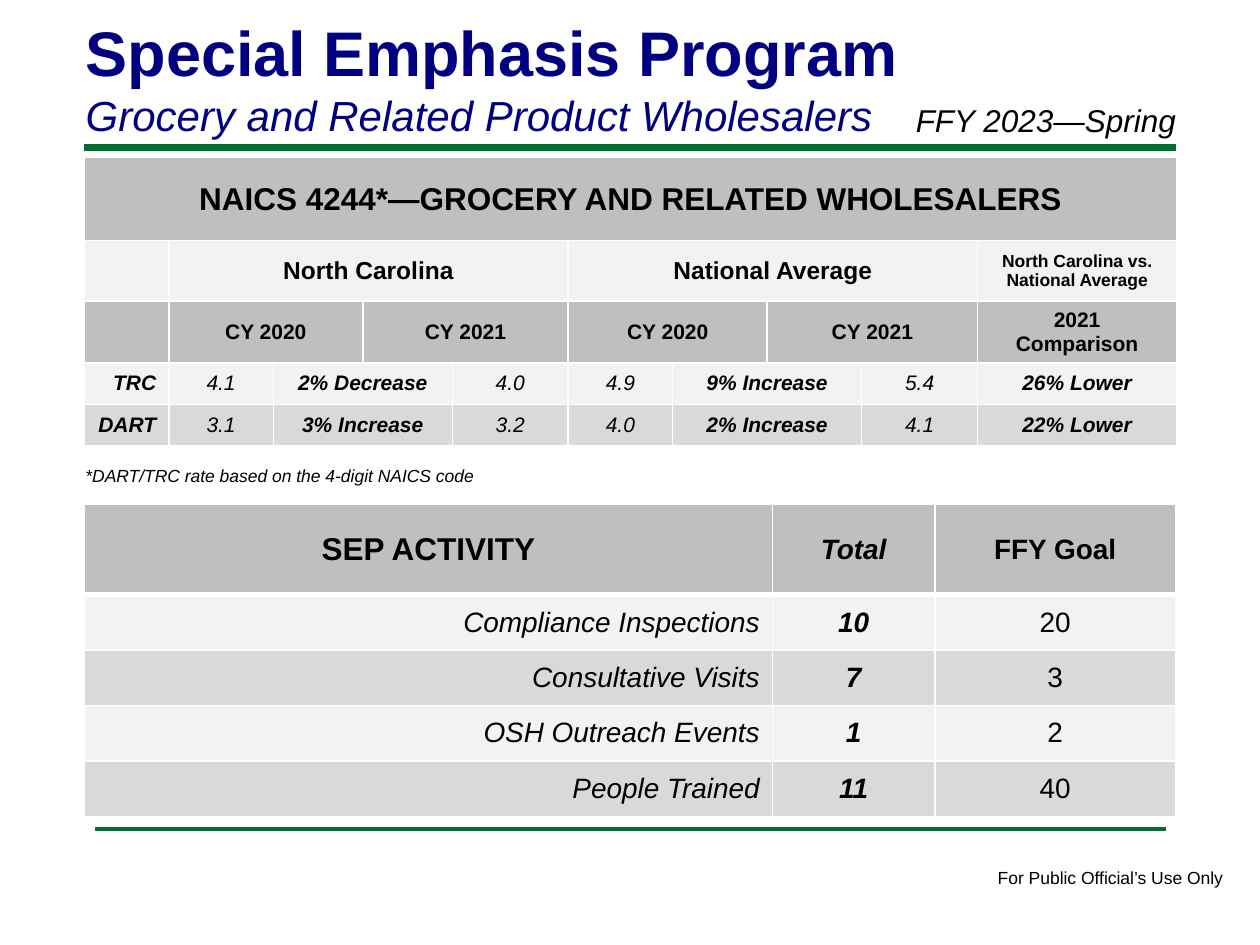
from lxml import etree
from pptx import Presentation
from pptx.dml.color import RGBColor
from pptx.enum.shapes import MSO_CONNECTOR
from pptx.enum.text import MSO_ANCHOR, MSO_AUTO_SIZE, PP_ALIGN
from pptx.oxml.ns import qn
from pptx.util import Inches, Pt

CENTER, LEFT, RIGHT = PP_ALIGN.CENTER, PP_ALIGN.LEFT, PP_ALIGN.RIGHT
MIDDLE, TOP = MSO_ANCHOR.MIDDLE, MSO_ANCHOR.TOP
NO_AUTOFIT = MSO_AUTO_SIZE.NONE
STRAIGHT = MSO_CONNECTOR.STRAIGHT

FONT = "Arial"
COLORS = {"navy": "000080", "green": "007030", "black": "000000", "white": "FFFFFF",
          "header": "BFBFBF", "light": "F2F2F2", "dark": "D9D9D9"}

TITLE = [("Special Emphasis Program", 36, True, False),
         ("Grocery and Related Product Wholesalers", 24, False, True)]
TEXTS = [("FFY 2023—Spring", (7.17, 0.75, 2.5, 0.4), 18, True, True),
         ("*DART/TRC rate based on the 4-digit NAICS code", (0.58, 3.64, 3.37, 0.27), 10, True, True),
         ("For Public Official’s Use Only", (7.82, 6.83, 2.01, 0.27), 10, False, False)]
RULES = [(0.67, 9.33, 1.17, 4), (0.75, 9.25, 6.58, 2)]

STYLES = {"banner": (18, True, False, CENTER), "region": (14, True, False, CENTER),
          "versus": (10, True, False, CENTER), "year": (12, True, False, CENTER),
          "measure": (12, True, True, RIGHT), "rate": (12, False, True, CENTER),
          "change": (12, True, True, CENTER), "total_head": (16, True, True, CENTER),
          "goal_head": (16, True, False, CENTER), "activity": (16, False, True, RIGHT),
          "total": (16, True, True, CENTER), "goal": (16, False, False, CENTER)}

RATE_STYLES = ["measure", "rate", "change", "rate", "rate", "change", "rate", "change"]
RATE_SPANS = [1, 1, 2, 1, 1, 2, 1, 1]
RATES = [("TRC", "4.1", "2% Decrease", "4.0", "4.9", "9% Increase", "5.4", "26% Lower"),
         ("DART", "3.1", "3% Increase", "3.2", "4.0", "2% Increase", "4.1", "22% Lower")]
RATE_TABLE = {
    "top": 1.25,
    "columns": [0.67, 0.83, 0.71, 0.71, 0.92, 0.83, 0.75, 0.75, 0.92, 1.58],
    "heights": [0.66, 0.48, 0.49, 0.33, 0.33],
    "fills": ["header", "light", "header", "light", "dark"],
    "header_rule": 1,
    "rows": [
        [("NAICS 4244*—GROCERY AND RELATED WHOLESALERS", "banner", 10)],
        [("", "region", 1), ("North Carolina", "region", 4), ("National Average", "region", 4),
         ("North Carolina vs. National Average", "versus", 1)],
        [("", "year", 1)] + [("CY 2020", "year", 2), ("CY 2021", "year", 2)] * 2
        + [("2021 Comparison", "year", 1)],
    ] + [list(zip(row, RATE_STYLES, RATE_SPANS)) for row in RATES],
}

ACTIVITIES = [("Compliance Inspections", "10", "20"), ("Consultative Visits", "7", "3"),
              ("OSH Outreach Events", "1", "2"), ("People Trained", "11", "40")]
ACTIVITY_TABLE = {
    "top": 4,
    "columns": [5.46, 1.29, 1.91],
    "heights": [0.72] + [0.44] * 4,
    "fills": ["header"] + ["light", "dark"] * 2,
    "header_rule": 3,
    "rows": [[("SEP ACTIVITY", "banner", 1), ("Total", "total_head", 1), ("FFY Goal", "goal_head", 1)]]
    + [list(zip(row, ["activity", "total", "goal"], [1, 1, 1])) for row in ACTIVITIES],
}


def rgb(name):
    return RGBColor.from_string(COLORS[name])


def style_paragraph(paragraph, size, bold, italic, align, color="black"):
    paragraph.alignment = align
    font = paragraph.font
    if paragraph.runs:
        font = paragraph.runs[0].font
    font.name, font.size, font.bold, font.italic = FONT, Pt(size), bold, italic
    font.color.rgb = rgb(color)


def add_title(slide):
    title = slide.shapes.title
    title.left, title.top, title.width, title.height = map(Inches, (0.58, 0.06, 8.25, 1.11))
    frame = title.text_frame
    frame.text = "\n".join(line[0] for line in TITLE)
    frame.auto_size, frame.vertical_anchor, frame.word_wrap = NO_AUTOFIT, TOP, True
    for paragraph, (_, size, bold, italic) in zip(frame.paragraphs, TITLE):
        style_paragraph(paragraph, size, bold, italic, LEFT, "navy")


def add_text(slide, text, box, size, italic, wrap):
    frame = slide.shapes.add_textbox(*map(Inches, box)).text_frame
    frame.text, frame.word_wrap = text, wrap
    style_paragraph(frame.paragraphs[0], size, False, italic, LEFT)


def add_rule(slide, left, right, top, weight):
    rule = slide.shapes.add_connector(STRAIGHT, *map(Inches, (left, top, right, top)))
    rule.line.color.rgb, rule.line.width = rgb("green"), Pt(weight)
    etree.SubElement(rule._element.spPr, qn("a:effectLst"))


def format_cell(cell, fill, bottom, top):
    properties = cell._tc.get_or_add_tcPr()
    for side, weight in (("L", 1), ("R", 1), ("T", top), ("B", bottom)):
        border = etree.SubElement(properties, qn(f"a:ln{side}"), w=str(Pt(weight)))
        solid = etree.SubElement(border, qn("a:solidFill"))
        etree.SubElement(solid, qn("a:srgbClr"), val=COLORS["white"])
    cell.fill.solid()
    cell.fill.fore_color.rgb = rgb(fill)
    cell.vertical_anchor = MIDDLE


def add_table(slide, content):
    columns, heights = content["columns"], content["heights"]
    table = slide.shapes.add_table(
        len(heights), len(columns),
        *map(Inches, (0.67, content["top"], sum(columns), sum(heights)))).table
    table.first_row = table.horz_banding = False
    for column, width in zip(table.columns, columns):
        column.width = Inches(width)
    for index, row in enumerate(content["rows"]):
        table.rows[index].height = Inches(heights[index])
        bottom = content["header_rule"] if index == 0 else 1
        top = content["header_rule"] if index == 1 else 1
        for cell in table.rows[index].cells:
            format_cell(cell, content["fills"][index], bottom, top)
        start = 0
        for text, style, span in row:
            cell = table.cell(index, start)
            if span > 1:
                cell.merge(table.cell(index, start + span - 1))
            cell.text_frame.text = text
            style_paragraph(cell.text_frame.paragraphs[0], *STYLES[style])
            start += span


def main():
    """Build the special emphasis program slide."""
    presentation = Presentation()
    presentation.slide_width, presentation.slide_height = Inches(10), Inches(7.5)
    slide = presentation.slides.add_slide(presentation.slide_layouts[5])
    add_title(slide)
    for rule in RULES:
        add_rule(slide, *rule)
    for content in (RATE_TABLE, ACTIVITY_TABLE):
        add_table(slide, content)
    for text in TEXTS:
        add_text(slide, *text)
    presentation.save("out.pptx")


if __name__ == "__main__":
    main()
